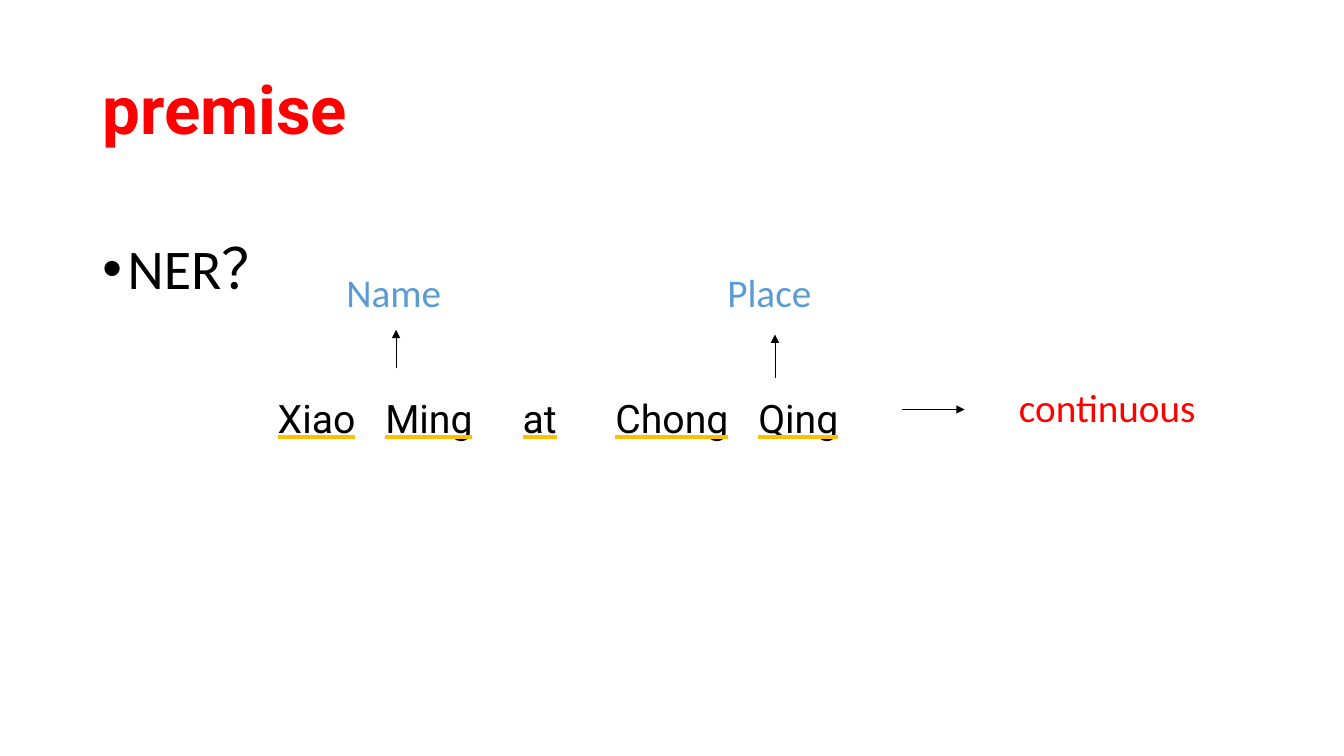
from lxml.etree import SubElement
from pptx import Presentation
from pptx.dml.color import RGBColor
from pptx.enum.shapes import MSO_CONNECTOR as Connector
from pptx.enum.text import MSO_ANCHOR as Anchor, MSO_UNDERLINE as Underline, PP_ALIGN as Align
from pptx.oxml.ns import qn
from pptx.util import Cm, Pt

RED = RGBColor(0xFF, 0, 0)
BLACK = RGBColor(0, 0, 0)
BLUE = RGBColor(0x5B, 0x9B, 0xD5)
UNDERLINE_COLOUR = "FFC000"
BODY_FONT = "Calibri"
ACCENT_FONT = "Roboto"

WORDS = [("Xiao", 0), ("Ming", 2.71), ("at", 6.17), ("Chong", 8.51), ("Qing", 12.11)]


def style_run(run, size, colour, name=BODY_FONT, bold=False):
    run.font.size = Pt(size)
    run.font.color.rgb = colour
    run.font.name = name
    run.font.bold = bold


def add_text(slide, box, text, size, colour):
    shape = slide.shapes.add_textbox(*map(Cm, box))
    shape.text_frame.word_wrap = True
    paragraph = shape.text_frame.paragraphs[0]
    paragraph.text = text
    style_run(paragraph.runs[0], size, colour)
    return paragraph


def add_title(slide, box):
    title = slide.shapes.title
    title.left, title.top, title.width, title.height = map(Cm, box)
    frame = title.text_frame
    frame.text = "premise"
    frame.vertical_anchor = Anchor.MIDDLE
    paragraph = frame.paragraphs[0]
    paragraph.alignment = Align.LEFT
    paragraph.line_spacing = 0.9
    style_run(paragraph.runs[0], 48, RED, ACCENT_FONT, bold=True)


def add_question(slide, box):
    paragraph = add_text(slide, box, "NER？", 40, BLACK)
    paragraph.line_spacing = 0.9
    properties = paragraph._p.get_or_add_pPr()
    properties.set("marL", str(Cm(0.64)))
    properties.set("indent", str(-Cm(0.64)))
    SubElement(properties, qn("a:buFont"), typeface="Arial")
    SubElement(properties, qn("a:buChar"), char="•")


def underline(run):
    run.font.underline = Underline.HEAVY_LINE
    line_fill = SubElement(run.font._element, qn("a:uFill"))
    solid = SubElement(line_fill, qn("a:solidFill"))
    SubElement(solid, qn("a:srgbClr"), val=UNDERLINE_COLOUR)
    run.font._element.find(qn("a:latin")).addprevious(line_fill)


def add_sentence(slide, box):
    shape = slide.shapes.add_textbox(*map(Cm, box))
    frame = shape.text_frame
    frame.word_wrap = True
    frame.margin_left = frame.margin_top = 0
    paragraph = frame.paragraphs[0]
    tab_list = SubElement(paragraph._p.get_or_add_pPr(), qn("a:tabLst"))
    for word, offset in WORDS:
        if offset:
            SubElement(tab_list, qn("a:tab"), pos=str(Cm(offset)), algn="l")
            gap = paragraph.add_run()
            gap.text = "\t"
            style_run(gap, 28, BLACK, ACCENT_FONT)
        run = paragraph.add_run()
        run.text = word
        style_run(run, 28, BLACK, ACCENT_FONT)
        underline(run)


def add_arrow(slide, start, end):
    arrow = slide.shapes.add_connector(Connector.STRAIGHT, *map(Cm, start + end))
    arrow.line.color.rgb = BLACK
    arrow.line.width = Pt(0.5)
    SubElement(arrow.line._get_or_add_ln(), qn("a:tailEnd"), type="triangle")
    SubElement(arrow._element.spPr, qn("a:effectLst"))


def add_entity(slide, box, label, arrow_x, arrow_top, arrow_length):
    left, top, _, _ = box
    add_text(slide, box, label, 28, BLUE)
    x, tip = left + arrow_x, top + arrow_top
    add_arrow(slide, (x, tip + arrow_length), (x, tip))


def add_conclusion(slide, box):
    left, top, _, _ = box
    add_arrow(slide, (left - 2.69, top + 0.79), (left - 1.12, top + 0.79))
    add_text(slide, box, "continuous", 28, RED)


def main():
    presentation = Presentation()
    presentation.slide_width = Cm(33.87)
    presentation.slide_height = Cm(19.05)
    slide = presentation.slides.add_slide(presentation.slide_layouts[5])
    add_title(slide, (2.33, 1.01, 29.21, 3.68))
    add_question(slide, (2.33, 5.95, 5.5, 1.9))
    add_sentence(slide, (7, 9.93, 15, 1.3))
    add_entity(slide, (8.48, 6.63, 3, 1.45), "Name", 1.5, 1.68, 0.97)
    add_entity(slide, (18.08, 6.63, 3, 1.45), "Place", 1.45, 1.8, 1.09)
    add_conclusion(slide, (25.43, 9.53, 5.03, 1.45))
    presentation.save("out.pptx")


if __name__ == "__main__":
    main()
